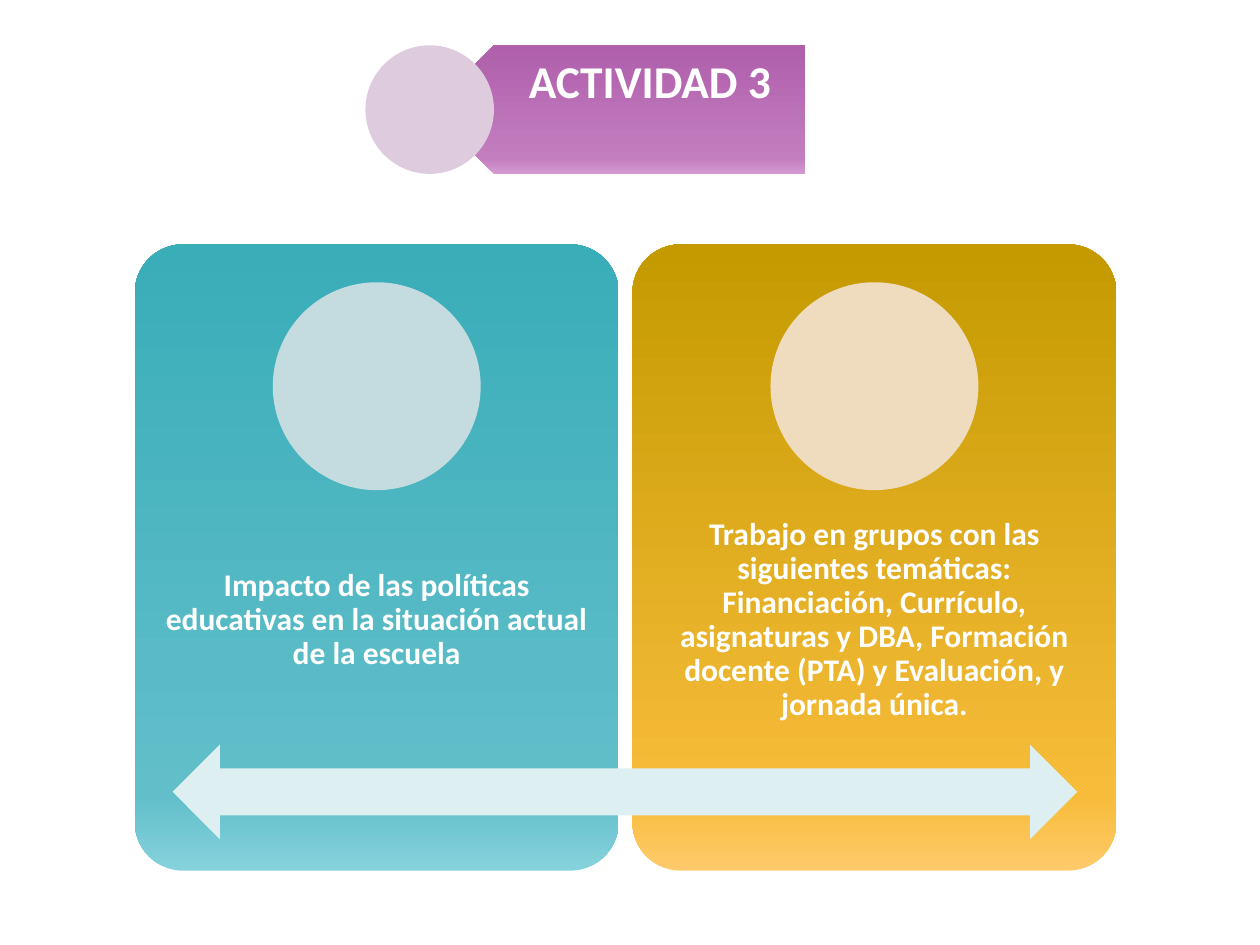
from dataclasses import dataclass

from lxml import etree
from pptx import Presentation
from pptx.dml.color import RGBColor
from pptx.enum.shapes import MSO_SHAPE
from pptx.enum.text import MSO_ANCHOR, MSO_AUTO_SIZE, PP_ALIGN
from pptx.oxml.ns import qn
from pptx.util import Inches, Pt

CARD, CIRCLE = MSO_SHAPE.ROUNDED_RECTANGLE, MSO_SHAPE.OVAL
ARROW, PLATE = MSO_SHAPE.LEFT_RIGHT_ARROW, MSO_SHAPE.PENTAGON
TOP, MIDDLE, CENTER = MSO_ANCHOR.TOP, MSO_ANCHOR.MIDDLE, PP_ALIGN.CENTER
NO_AUTOFIT = MSO_AUTO_SIZE.NONE

STOPS = (0, 12, 100)
CARD_TOP, CARD_WIDTH, CARD_HEIGHT = 1.94, 3.84, 4.97
CARD_LEFT, CARD_STEP = 1.07, 3.95
CARD_CIRCLE = 1.65
BADGE_TOP, BADGE_SIZE = 0.36, 1.02


@dataclass
class Card:
    text: str
    gradient: tuple[str, ...]
    circle_color: str


CARDS = [
    Card(
        "Impacto de las políticas educativas en la situación actual de la escuela",
        ("85D2DC", "62BFCA", "39ADB8"),
        "C4DCE0",
    ),
    Card(
        "Trabajo en grupos con las siguientes temáticas: Financiación, Currículo, "
        "asignaturas y DBA, Formación docente (PTA) y Evaluación, y jornada única.",
        ("FFCA6B", "F7BC3A", "C49A00"),
        "EFDBBD",
    ),
]


def rgb(color: str) -> RGBColor:
    """Turn a hex string into a colour."""
    return RGBColor.from_string(color)


def add_figure(page, kind, left: float, top: float, width: float, height: float, color: str):
    """Add a flat, borderless shape."""
    shape = page.shapes.add_shape(kind, Inches(left), Inches(top), Inches(width), Inches(height))
    shape.shadow.inherit = False
    shape.fill.solid()
    shape.fill.fore_color.rgb = rgb(color)
    shape.line.fill.background()
    return shape


def set_gradient(shape, colors: tuple[str, ...]) -> None:
    """Fill a shape from bottom to top with the three shared stops."""
    shape.fill.gradient()
    shape.fill.gradient_angle = 90
    gradient = shape.element.spPr.find(qn("a:gradFill"))
    gradient.set("rotWithShape", "0")
    stop_list = gradient.find(qn("a:gsLst"))
    for stop in list(stop_list):
        stop_list.remove(stop)
    for position, color in zip(STOPS, colors):
        stop = etree.SubElement(stop_list, qn("a:gs"), pos=str(position * 1000))
        etree.SubElement(stop, qn("a:srgbClr"), val=color)


def write(box, text: str, size: int, insets: tuple[float, ...], anchor) -> None:
    """Write white bold centred text with left, top, right and bottom insets."""
    frame = box.text_frame
    frame.text = text
    frame.word_wrap = True
    frame.auto_size = NO_AUTOFIT
    frame.vertical_anchor = anchor
    frame.margin_left, frame.margin_top, frame.margin_right, frame.margin_bottom = map(Inches, insets)
    para = frame.paragraphs[0]
    para.alignment = CENTER
    para.line_spacing = 0.9
    para.space_before = Pt(0)
    font = para.runs[0].font
    font.name, font.size, font.bold = "Calibri", Pt(size), True
    font.color.rgb = rgb("FFFFFF")


def add_card(page, card: Card, left: float) -> None:
    """Draw a rounded card with its text and circle."""
    panel = add_figure(page, CARD, left, CARD_TOP, CARD_WIDTH, CARD_HEIGHT, card.gradient[1])
    panel.adjustments[0] = 0.1
    set_gradient(panel, card.gradient)
    box = page.shapes.add_textbox(Inches(left), Inches(3.93), Inches(CARD_WIDTH), Inches(1.99))
    write(box, card.text, 18, (0.14,) * 4, MIDDLE)
    circle_left = left + (CARD_WIDTH - CARD_CIRCLE) / 2
    add_figure(page, CIRCLE, circle_left, 2.24, CARD_CIRCLE, CARD_CIRCLE, card.circle_color)


def add_heading(page) -> None:
    """Draw the title on its plate, with the circle over the tip."""
    colors = ("D499D1", "C37EBF", "AF5FAB")
    plate = add_figure(page, PLATE, 3.41, BADGE_TOP, 2.98, BADGE_SIZE, colors[1])
    plate.rotation = 180
    set_gradient(plate, colors)
    title = page.shapes.title
    title.left, title.top = Inches(3.67), Inches(BADGE_TOP)
    title.width, title.height = Inches(2.73), Inches(BADGE_SIZE)
    write(title, "ACTIVIDAD 3", 26, (0.45, 0.11, 0.2, 0.11), TOP)
    plate.element.addnext(title.element)
    add_figure(page, CIRCLE, 2.9, BADGE_TOP, BADGE_SIZE, BADGE_SIZE, "DFCBDE")


def main() -> None:
    """Build the slide and save it."""
    deck = Presentation()
    deck.slide_width, deck.slide_height = Inches(10), Inches(7.5)
    page = deck.slides.add_slide(deck.slide_layouts[5])
    for index, card in enumerate(CARDS):
        add_card(page, card, CARD_LEFT + index * CARD_STEP)
    add_figure(page, ARROW, 1.37, 5.91, 7.18, 0.75, "DEEFF1")
    add_heading(page)
    deck.save("out.pptx")


if __name__ == "__main__":
    main()
